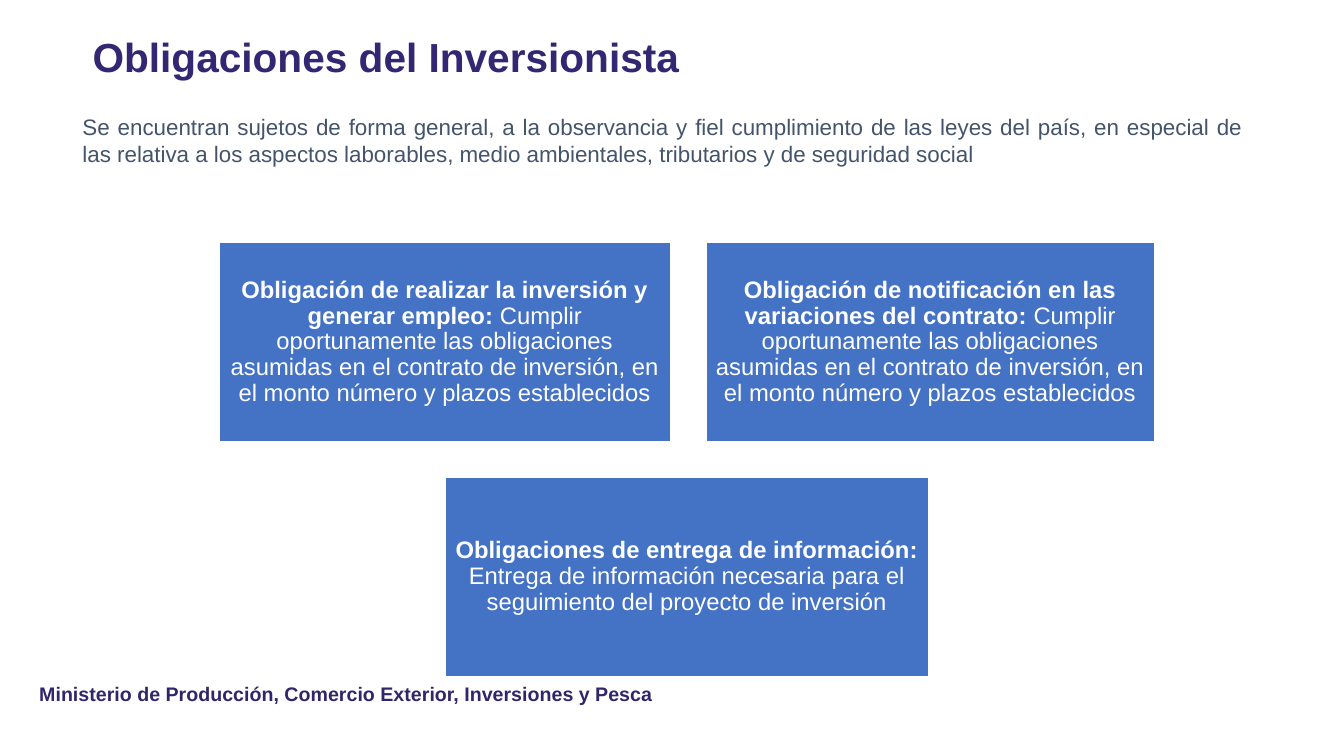
from pptx import Presentation
from pptx.dml.color import RGBColor
from pptx.enum.shapes import MSO_SHAPE
from pptx.enum.text import MSO_ANCHOR, MSO_AUTO_SIZE, PP_ALIGN
from pptx.util import Cm, Pt

COLORS = {
    "title": "332774",
    "footer": "32266B",
    "body": "44546A",
    "box": "4472C4",
    "white": "FFFFFF",
}
FONT = "Arial"
CENTER_X = 17.31
FIRST_ROW_TOP = 6.1
BOX_HEIGHT = 5.05
GAP = 0.86
CONTRACT_DUTY = (
    "Cumplir oportunamente las obligaciones asumidas en el contrato de "
    "inversión, en el monto número y plazos establecidos"
)
OBLIGATION_ROWS = [
    [
        (11.4, "Obligación de realizar la inversión y generar empleo: ", CONTRACT_DUTY),
        (11.34, "Obligación de notificación en las variaciones del contrato: ", CONTRACT_DUTY),
    ],
    [
        (12.22, "Obligaciones de entrega de información: ",
         "Entrega de información necesaria para el seguimiento del proyecto de inversión"),
    ],
]


def add_text(paragraph, text, size, color, bold=False,
             alignment=PP_ALIGN.LEFT, line_spacing=1.0):
    paragraph.alignment = alignment
    paragraph.line_spacing = line_spacing
    run = paragraph.add_run()
    run.text = text
    run.font.name = FONT
    run.font.size = Pt(size)
    run.font.bold = bold
    run.font.color.rgb = RGBColor.from_string(COLORS[color])


def place_title(slide, text):
    title = slide.shapes.title
    title.left, title.top, title.width, title.height = Cm(2.08), Cm(0.46), Cm(29.21), Cm(2.06)
    frame = title.text_frame
    frame.auto_size = MSO_AUTO_SIZE.NONE
    frame.vertical_anchor = MSO_ANCHOR.MIDDLE
    add_text(frame.paragraphs[0], text, size=29, color="title", bold=True, line_spacing=0.9)


def add_text_box(slide, left, top, width, height, text, anchor=MSO_ANCHOR.TOP, **text_format):
    frame = slide.shapes.add_textbox(Cm(left), Cm(top), Cm(width), Cm(height)).text_frame
    frame.word_wrap = True
    frame.vertical_anchor = anchor
    add_text(frame.paragraphs[0], text, **text_format)


def add_obligation(slide, left, top, width, heading, detail):
    shape = slide.shapes.add_shape(
        MSO_SHAPE.RECTANGLE, Cm(left), Cm(top), Cm(width), Cm(BOX_HEIGHT))
    shape.shadow.inherit = False
    shape.fill.solid()
    shape.fill.fore_color.rgb = RGBColor.from_string(COLORS["box"])
    shape.line.color.rgb = RGBColor.from_string(COLORS["white"])
    shape.line.width = Pt(2)
    frame = shape.text_frame
    frame.word_wrap = True
    frame.vertical_anchor = MSO_ANCHOR.MIDDLE
    frame.margin_left = frame.margin_right = frame.margin_top = frame.margin_bottom = Cm(0.18)
    for text, bold in ((heading, True), (detail, False)):
        add_text(frame.paragraphs[0], text, size=17, color="white", bold=bold,
                 alignment=PP_ALIGN.CENTER, line_spacing=0.9)


def add_obligation_rows(slide):
    for index, row in enumerate(OBLIGATION_ROWS):
        row_width = sum(width for width, _, _ in row) + GAP * (len(row) - 1)
        left = CENTER_X - row_width / 2
        top = FIRST_ROW_TOP + index * (BOX_HEIGHT + GAP)
        for width, heading, detail in row:
            add_obligation(slide, left, top, width, heading, detail)
            left += width + GAP


def main():
    presentation = Presentation()
    presentation.slide_width = Cm(33.87)
    presentation.slide_height = Cm(19.05)
    slide = presentation.slides.add_slide(presentation.slide_layouts[5])
    add_text_box(slide, 0.74, 17.04, 17.75, 0.86,
                 "Ministerio de Producción, Comercio Exterior, Inversiones y Pesca",
                 anchor=MSO_ANCHOR.MIDDLE, size=14, color="footer", bold=True)
    place_title(slide, "Obligaciones del Inversionista")
    add_text_box(slide, 1.83, 2.72, 29.74, 1.63,
                 "Se encuentran sujetos de forma general, a la observancia y fiel "
                 "cumplimiento de las leyes del país, en especial de las relativa a los "
                 "aspectos laborables, medio ambientales, tributarios y de seguridad social",
                 size=16, color="body", alignment=PP_ALIGN.JUSTIFY)
    add_obligation_rows(slide)
    presentation.save("out.pptx")


if __name__ == "__main__":
    main()
